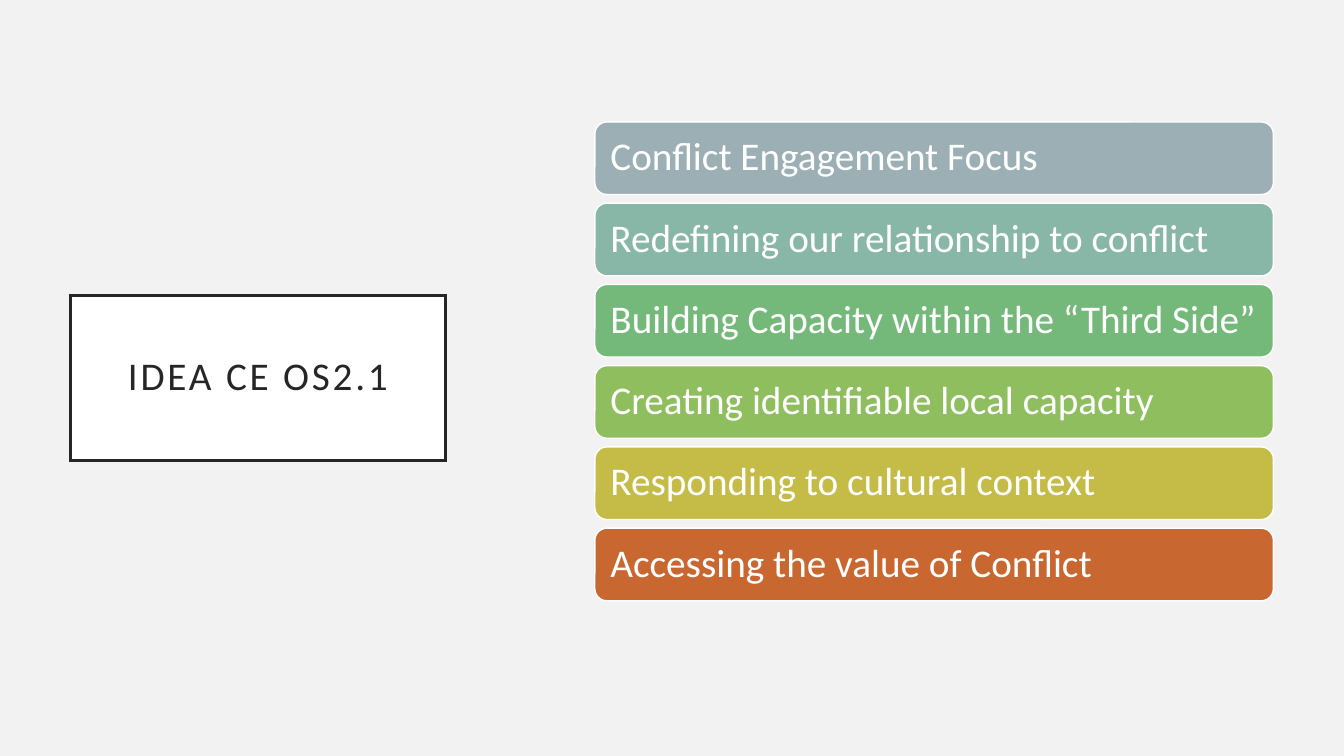
"""Build a slide with a framed title beside a stack of coloured bars."""
from lxml.etree import SubElement
from pptx import Presentation
from pptx.dml.color import RGBColor as RGB
from pptx.enum.shapes import MSO_SHAPE as Shape
from pptx.enum.text import MSO_ANCHOR as Anchor, PP_ALIGN as Align
from pptx.oxml.ns import qn
from pptx.util import Inches, Pt

TITLE = "IDEA CE OS2.1"
BARS = [
    ("Conflict Engagement Focus", RGB(0x9B, 0xAF, 0xB5)),
    ("Redefining our relationship to conflict", RGB(0x88, 0xB6, 0xA7)),
    ("Building Capacity within the “Third Side”", RGB(0x74, 0xB9, 0x7A)),
    ("Creating identifiable local capacity", RGB(0x8E, 0xBE, 0x5E)),
    ("Responding to cultural context", RGB(0xC4, 0xBC, 0x47)),
    ("Accessing the value of Conflict", RGB(0xC9, 0x67, 0x31)),
]
WHITE = RGB(0xFF, 0xFF, 0xFF)
DARK = RGB(0x26, 0x26, 0x26)
PALE = RGB(0xF2, 0xF2, 0xF2)
LEFT, WIDE, HIGH = 5.9, 6.73, 0.72
TOP, LAST = 1.21, 5.24


def add_box(slide, kind, place, text, fill, edge, weight, ink, inset, align):
    box = slide.shapes.add_shape(kind, *map(Inches, place))
    box.shadow.inherit = False
    box.fill.solid()
    box.fill.fore_color.rgb = fill
    box.line.color.rgb = edge
    box.line.width = Pt(weight)
    frame = box.text_frame
    frame.word_wrap = True
    frame.vertical_anchor = Anchor.MIDDLE
    frame.margin_left = frame.margin_right = Inches(inset)
    frame.margin_top = frame.margin_bottom = Inches(inset)
    para = frame.paragraphs[0]
    para.text = text
    para.alignment = align
    para.line_spacing = 0.9
    para.font.name = "Calibri"
    para.font.size = Pt(28)
    para.runs[0].font.color.rgb = ink
    return box


def main():
    deck = Presentation()
    deck.slide_width, deck.slide_height = Inches(13.33), Inches(7.5)
    slide = deck.slides.add_slide(deck.slide_layouts[6])
    slide.background.fill.solid()
    slide.background.fill.fore_color.rgb = PALE

    title = add_box(slide, Shape.RECTANGLE, (0.7, 2.93, 3.72, 1.64), TITLE,
                    WHITE, DARK, 2.5, DARK, 0.2, Align.CENTER)
    run = title.text_frame.paragraphs[0].runs[0]
    run.font._element.set("spc", "200")
    edge = title._element.spPr.find(qn("a:ln"))
    SubElement(edge, qn("a:miter")).set("lim", "800000")

    step = (LAST - TOP) / (len(BARS) - 1)
    for i, (text, fill) in enumerate(BARS):
        add_box(slide, Shape.ROUNDED_RECTANGLE, (LEFT, TOP + i * step, WIDE, HIGH),
                text, fill, WHITE, 1, WHITE, 0.12, Align.LEFT)
    deck.save("out.pptx")


if __name__ == "__main__":
    main()
